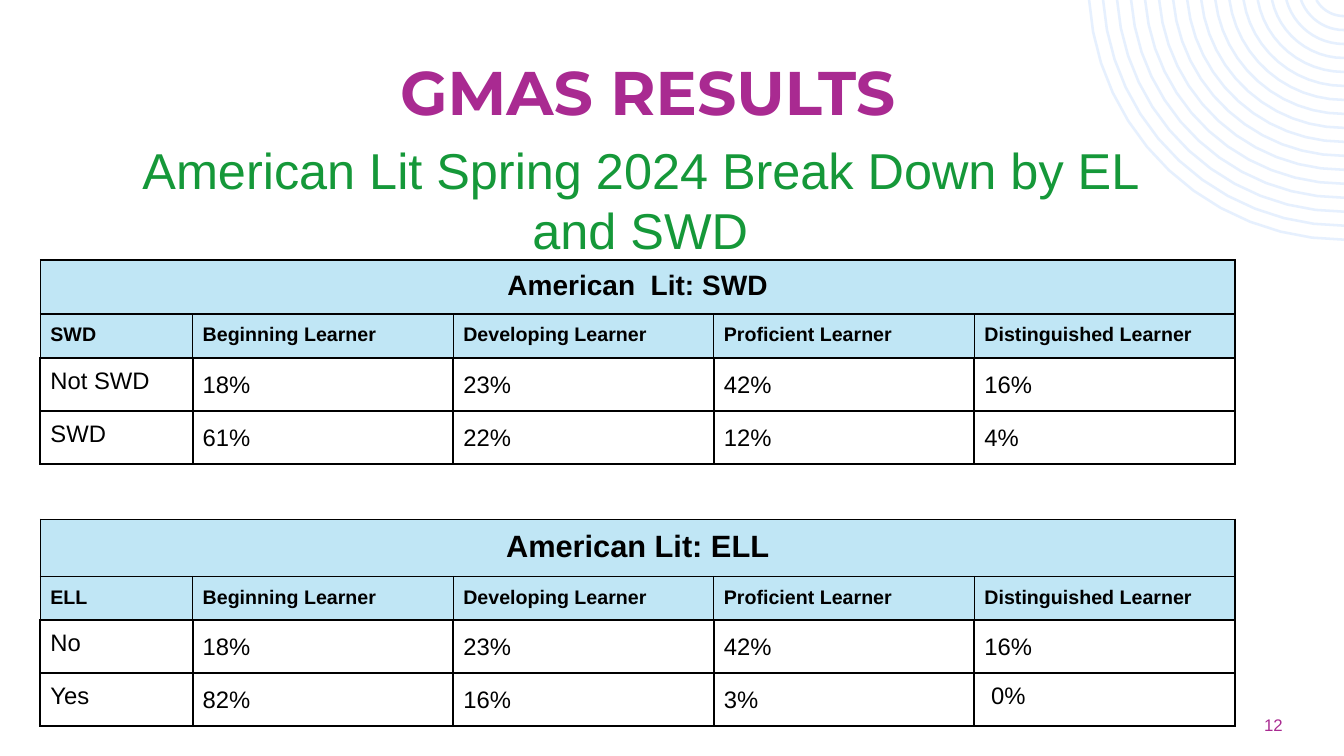
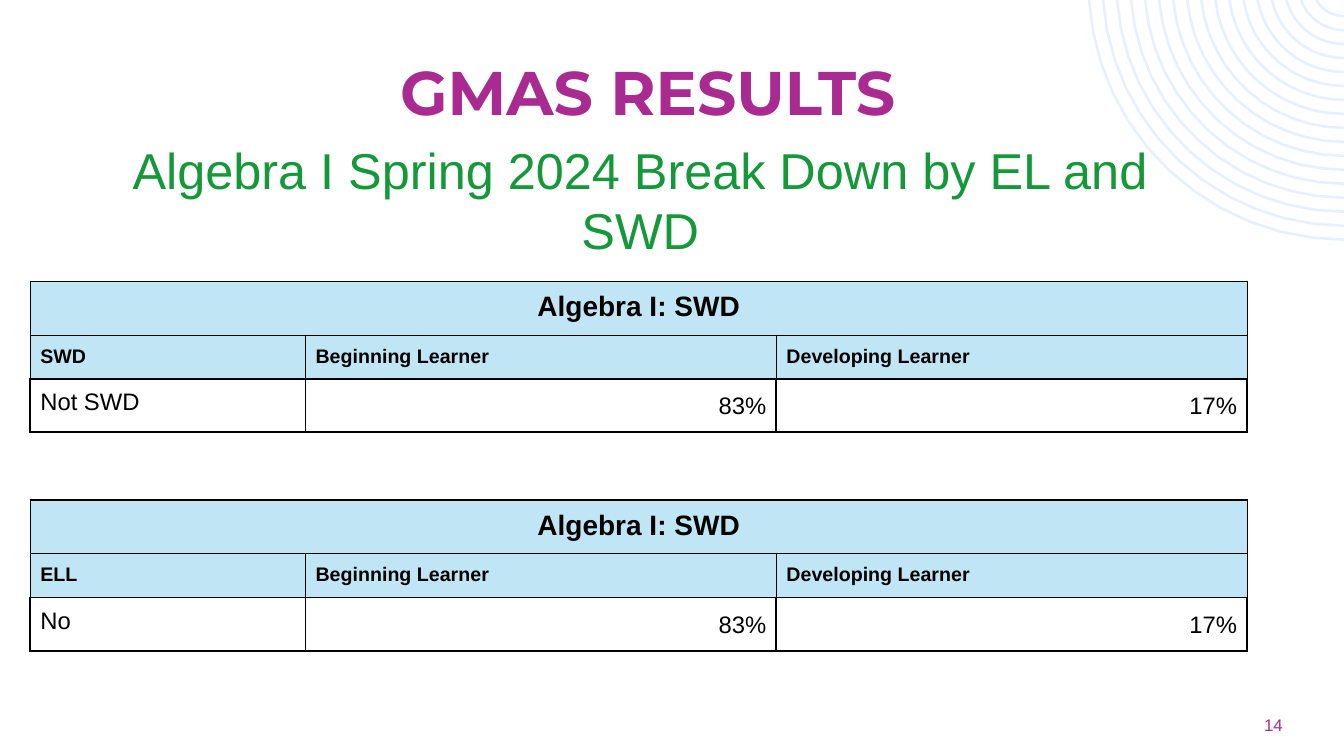
from math import asin, cos, pi, sin

from lxml import etree
from pptx import Presentation
from pptx.dml.color import RGBColor
from pptx.enum.text import MSO_ANCHOR, PP_ALIGN
from pptx.oxml.ns import qn
from pptx.util import Inches, Pt

LEFT, CENTER, RIGHT = PP_ALIGN.LEFT, PP_ALIGN.CENTER, PP_ALIGN.RIGHT
TOP, MIDDLE = MSO_ANCHOR.TOP, MSO_ANCHOR.MIDDLE

PURPLE = RGBColor(0xA9, 0x2A, 0x91)
GREEN = RGBColor(0x15, 0x98, 0x39)
BLACK = RGBColor(0x00, 0x00, 0x00)
HEADER_BLUE = RGBColor(0xC0, 0xE6, 0xF5)
RING_BLUE = RGBColor(0xE6, 0xF0, 0xFE)

prs = Presentation()
prs.slide_width, prs.slide_height = Inches(13.33), Inches(7.5)
COL, ROW = prs.slide_width / 100, prs.slide_height / 100

# Text style: left, top, width, height in columns and rows, then size, font, colour, bold, anchor
TITLE = (4.43, 6.53, 87.55, 11.2, 44, "Montserrat", PURPLE, True, TOP)
SUBTITLE = (6.98, 17.73, 81.32, 17.47, 36, "Arial", GREEN, False, TOP)
PAGE_NUMBER = (90.7, 93.87, 8.1, 4, 12, "Arial", PURPLE, False, MIDDLE)

# Rings in the top right corner, in columns
RING_COUNT, RING_PITCH, RING_LINE = 17, 1.04, Pt(1.8)
OUTER_RADIUS, CENTER_Y, ARC_STEPS = 19, -1.16, 12

TITLE_ROWS = {20: 7.13, 22: 7.55}
HEADER_ROW, BODY_ROW = 5.73, 7.01
THIN, THICK = 0.94, 1.5
CELL_MARGIN = Inches(0.1)

LEVELS = ["Beginning Learner", "Developing Learner", "Proficient Learner", "Distinguished Learner"]

# Each table: top row, title, title size, header label, body rows
SLIDES = [
    {
        "number": "12",
        "subtitle": "American Lit Spring 2024 Break Down by EL and SWD",
        "levels": LEVELS,
        "left": 3, "width": 88.9, "label_width": 11.33, "value_align": LEFT,
        "tables": [
            (34.4, "American  Lit: SWD", 20, "SWD",
             [["Not SWD", "18%", "23%", "42%", "16%"],
              ["SWD", "61%", "22%", "12%", "4%"]]),
            (68.67, "American Lit: ELL", 22, "ELL",
             [["No", "18%", "23%", "42%", "16%"],
              ["Yes", "82%", "16%", "3%", " 0%"]]),
        ],
    },
    {
        "number": "14",
        "subtitle": "Algebra I Spring 2024 Break Down by EL and SWD",
        "levels": LEVELS[:2],
        "left": 2.25, "width": 90.55, "label_width": 20.48, "value_align": RIGHT,
        "tables": [
            (37.2, "Algebra I: SWD", 20, "SWD", [["Not SWD", "83%", "17%"]]),
            (66.13, "Algebra I: SWD", 20, "ELL", [["No", "83%", "17%"]]),
        ],
    },
]


def add_text(slide, text, style):
    left, top, width, height, size, font, color, bold, anchor = style
    box = slide.shapes.add_textbox(
        round(left * COL), round(top * ROW), round(width * COL), round(height * ROW))
    frame = box.text_frame
    frame.word_wrap = True
    frame.vertical_anchor = anchor
    frame.text = text
    line = frame.paragraphs[0]
    line.alignment = CENTER
    line.font.size, line.font.name, line.font.bold = Pt(size), font, bold
    line.font.color.rgb = color


def set_borders(cell, side_width, bottom_width):
    """Draw black cell borders; must run before the cell gets its fill."""
    properties = cell._tc.get_or_add_tcPr()
    for side in ("L", "R", "T", "B"):
        width = bottom_width if side == "B" else side_width
        border = etree.SubElement(properties, qn(f"a:ln{side}"), w=str(Pt(width)))
        paint = etree.SubElement(border, qn("a:solidFill"))
        etree.SubElement(paint, qn("a:srgbClr"), val=str(BLACK))


# Each ring runs from the slide's top edge to its right edge
rings = []
for ring in range(RING_COUNT):
    radius = OUTER_RADIUS - ring * RING_PITCH
    start = asin(-CENTER_Y / radius)
    angles = [start + (pi / 2 - start) * step / ARC_STEPS for step in range(ARC_STEPS + 1)]
    rings.append([((100 - radius * cos(angle)) * COL, (CENTER_Y + radius * sin(angle)) * COL)
                  for angle in angles])

for content in SLIDES:
    slide = prs.slides.add_slide(prs.slide_layouts[6])

    builder = slide.shapes.build_freeform(*rings[0][0])
    for arc in rings:
        builder.move_to(*arc[0])
        builder.add_line_segments(arc[1:], close=False)
    corner_rings = builder.convert_to_shape()
    corner_rings.shadow.inherit = False
    corner_rings.fill.background()
    corner_rings.line.color.rgb = RING_BLUE
    corner_rings.line.width = RING_LINE

    add_text(slide, content["number"], PAGE_NUMBER)
    add_text(slide, "GMAS RESULTS", TITLE)
    add_text(slide, content["subtitle"], SUBTITLE)

    levels = content["levels"]
    value_width = (content["width"] - content["label_width"]) / len(levels)
    column_widths = [content["label_width"]] + [value_width] * len(levels)

    for top, title, title_size, label, body in content["tables"]:
        rows = [[title] + [""] * len(levels), [label] + levels] + body
        row_heights = [TITLE_ROWS[title_size], HEADER_ROW] + [BODY_ROW] * len(body)
        results = slide.shapes.add_table(
            len(rows), len(column_widths), round(content["left"] * COL), round(top * ROW),
            round(content["width"] * COL), round(sum(row_heights) * ROW)).table
        results.first_row = results.horz_banding = False
        for column, width in zip(results.columns, column_widths):
            column.width = round(width * COL)

        for r, (values, height) in enumerate(zip(rows, row_heights)):
            results.rows[r].height = round(height * ROW)
            is_heading = r < 2
            for c, value in enumerate(values):
                cell = results.cell(r, c)
                set_borders(cell, THIN if is_heading else THICK, THIN if r == 0 else THICK)
                cell.margin_left = cell.margin_right = CELL_MARGIN
                cell.margin_top = cell.margin_bottom = CELL_MARGIN
                if is_heading:
                    cell.fill.solid()
                    cell.fill.fore_color.rgb = HEADER_BLUE
                else:
                    cell.fill.background()
                cell.text = value
                line = cell.text_frame.paragraphs[0]
                line.font.name, line.font.bold = "Arial", is_heading
                line.font.size = Pt((title_size, 14)[r] if is_heading else 17)
                line.font.color.rgb = BLACK
                if r == 0:
                    line.alignment = CENTER
                elif not is_heading and c > 0:
                    line.alignment = content["value_align"]
                    if not value.startswith(" "):
                        line.line_spacing = 1.15
        results.cell(0, 0).merge(results.cell(0, len(levels)))

prs.save("out.pptx")
